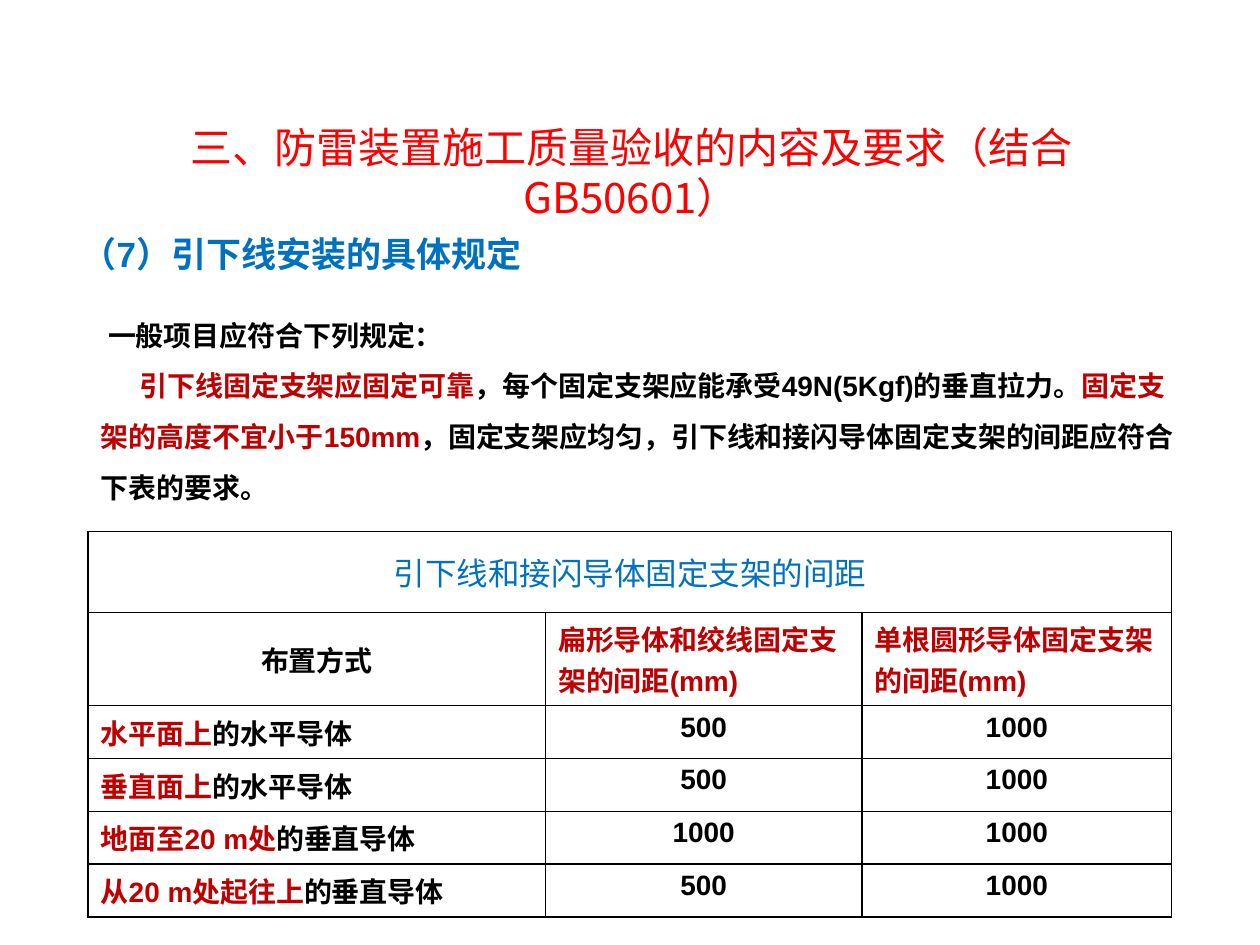
from pptx import Presentation
from pptx.util import Inches, Pt
from pptx.dml.color import RGBColor
from pptx.enum.text import MSO_ANCHOR, PP_ALIGN
from pptx.oxml.ns import qn
from lxml.etree import SubElement

THEME = {
    "latin": "Arial", "cjk": "Noto Sans CJK SC",
    "title": "FF0000", "blue": "0070C0", "key": "C00000", "ink": "000000",
    "title_size": 24, "heading_size": 20, "caption_size": 18, "body_size": 16,
}
TITLE = "三、防雷装置施工质量验收的内容及要求（结合GB50601）"
HEADING = "（7）引下线安装的具体规定"
INTRO = "一般项目应符合下列规定："
RULES = [
    ("引下线固定支架应固定可靠", "key"),
    ("，每个固定支架应能承受49N(5Kgf)的垂直拉力。", "ink"),
    ("固定支架的高度不宜小于150mm", "key"),
    ("，固定支架应均匀，引下线和接闪导体固定支架的间距应符合下表的要求。", "ink"),
]
CAPTION = "引下线和接闪导体固定支架的间距"
HEADERS = [("布置方式", "ink"), ("扁形导体和绞线固定支架的间距(mm)", "key"),
           ("单根圆形导体固定支架的间距(mm)", "key")]
SPACINGS = [
    ("水平面上", "的水平导体", "500", "1000"),
    ("垂直面上", "的水平导体", "500", "1000"),
    ("地面至20 m处", "的垂直导体", "1000", "1000"),
    ("从20 m处起往上", "的垂直导体", "500", "1000"),
]
COLUMNS = [3.63, 2.51, 2.46]
ROWS = [0.64, 0.74] + [0.42] * len(SPACINGS)


def write(p, runs, size="body_size", bold=True, font="latin",
          align=PP_ALIGN.LEFT, spacing=None, indent=0):
    p.alignment = align
    if spacing:
        p.line_spacing = spacing
    if indent:
        p._p.get_or_add_pPr().set("indent", str(Inches(indent)))
    for text, color in runs:
        r = p.add_run()
        r.text = text
        r.font.size = Pt(THEME[size])
        r.font.bold = bold
        r.font.name = THEME[font]
        r.font.color.rgb = RGBColor.from_string(THEME[color])
        SubElement(r._r.get_or_add_rPr(), qn("a:ea"), typeface=THEME["cjk"])


def add_text(s, box, anchor=MSO_ANCHOR.TOP):
    tf = s.shapes.add_textbox(*map(Inches, box)).text_frame
    tf.word_wrap = True
    tf.vertical_anchor = anchor
    return tf


def style_cell(cell):
    tcPr = cell._tc.get_or_add_tcPr()
    for side in ("lnL", "lnR", "lnT", "lnB"):
        ln = SubElement(tcPr, qn(f"a:{side}"), w=str(Pt(1)))
        fill = SubElement(ln, qn("a:solidFill"))
        SubElement(fill, qn("a:srgbClr"), val=THEME["ink"])
    cell.fill.background()


def add_spacing_table(s):
    table = s.shapes.add_table(len(ROWS), len(COLUMNS), Inches(0.7), Inches(4.22),
                               Inches(sum(COLUMNS)), Inches(sum(ROWS))).table
    table.first_row = table.horz_banding = False
    for column, width in zip(table.columns, COLUMNS):
        column.width = Inches(width)
    for row, height in zip(table.rows, ROWS):
        row.height = Inches(height)
    for cell in table.iter_cells():
        style_cell(cell)

    caption = table.cell(0, 0)
    caption.merge(table.cell(0, len(COLUMNS) - 1))
    caption.vertical_anchor = MSO_ANCHOR.MIDDLE
    write(caption.text_frame.paragraphs[0], [(CAPTION, "blue")],
          size="caption_size", bold=False, align=PP_ALIGN.CENTER)

    body = [[[header] for header in HEADERS]]
    for place, conductor, flat, rod in SPACINGS:
        body.append([[(place, "key"), (conductor, "ink")], [(flat, "ink")], [(rod, "ink")]])
    for i, row in enumerate(body, 1):
        for j, runs in enumerate(row):
            centred = (i == 1) == (j == 0)
            write(table.cell(i, j).text_frame.paragraphs[0], runs,
                  align=PP_ALIGN.CENTER if centred else PP_ALIGN.LEFT)
    table.cell(1, 0).vertical_anchor = MSO_ANCHOR.MIDDLE


def main():
    prs = Presentation()
    prs.slide_width, prs.slide_height = Inches(10), Inches(7.5)
    s = prs.slides.add_slide(prs.slide_layouts[6])

    tf = add_text(s, (0.62, 1, 8.78, 0.72), MSO_ANCHOR.MIDDLE)
    write(tf.paragraphs[0], [(TITLE, "title")], size="title_size", bold=False,
          font="cjk", align=PP_ALIGN.CENTER)

    tf = add_text(s, (0.7, 2.34, 8.83, 1.88))
    write(tf.paragraphs[0], [(INTRO, "ink")], spacing=Pt(29), indent=0.06)
    write(tf.add_paragraph(), RULES, spacing=Pt(29), indent=0.31)

    add_spacing_table(s)

    tf = add_text(s, (0.55, 1.8, 3.74, 0.44))
    write(tf.paragraphs[0], [(HEADING, "blue")], size="heading_size")
    prs.save("out.pptx")


if __name__ == "__main__":
    main()
